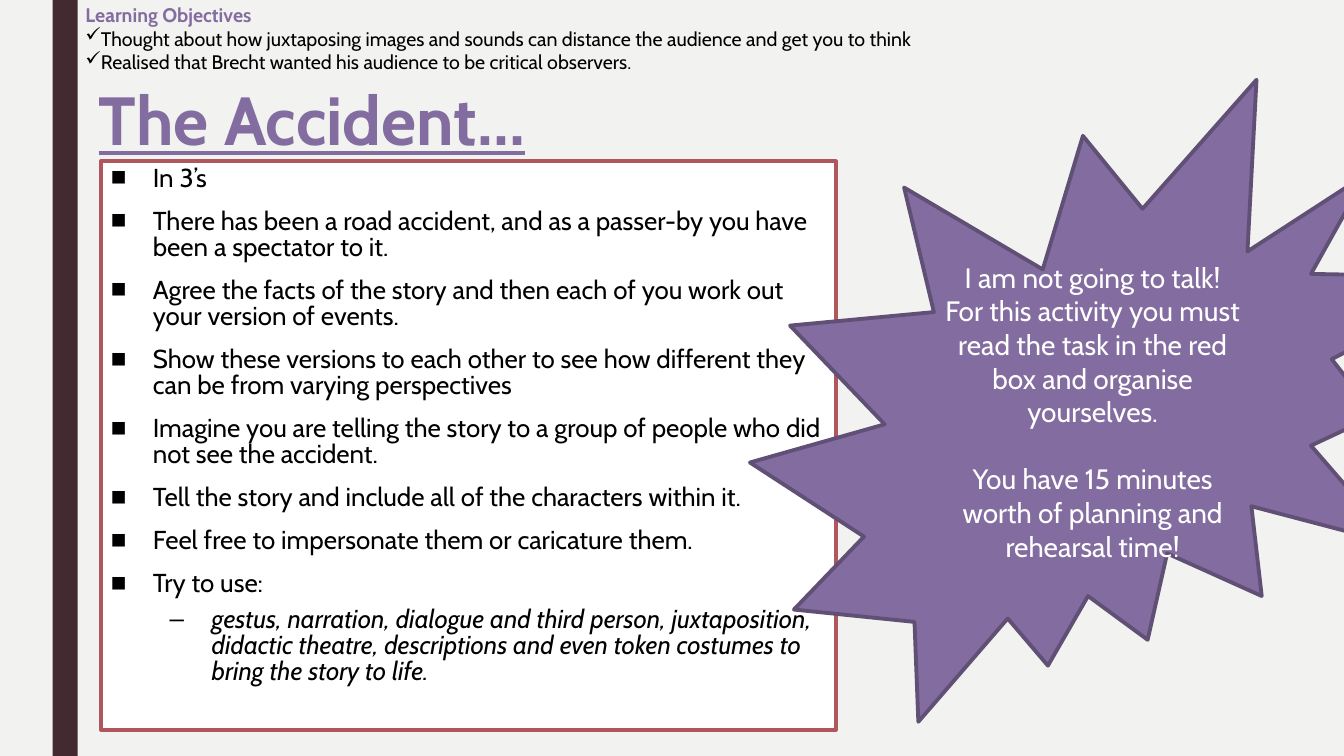
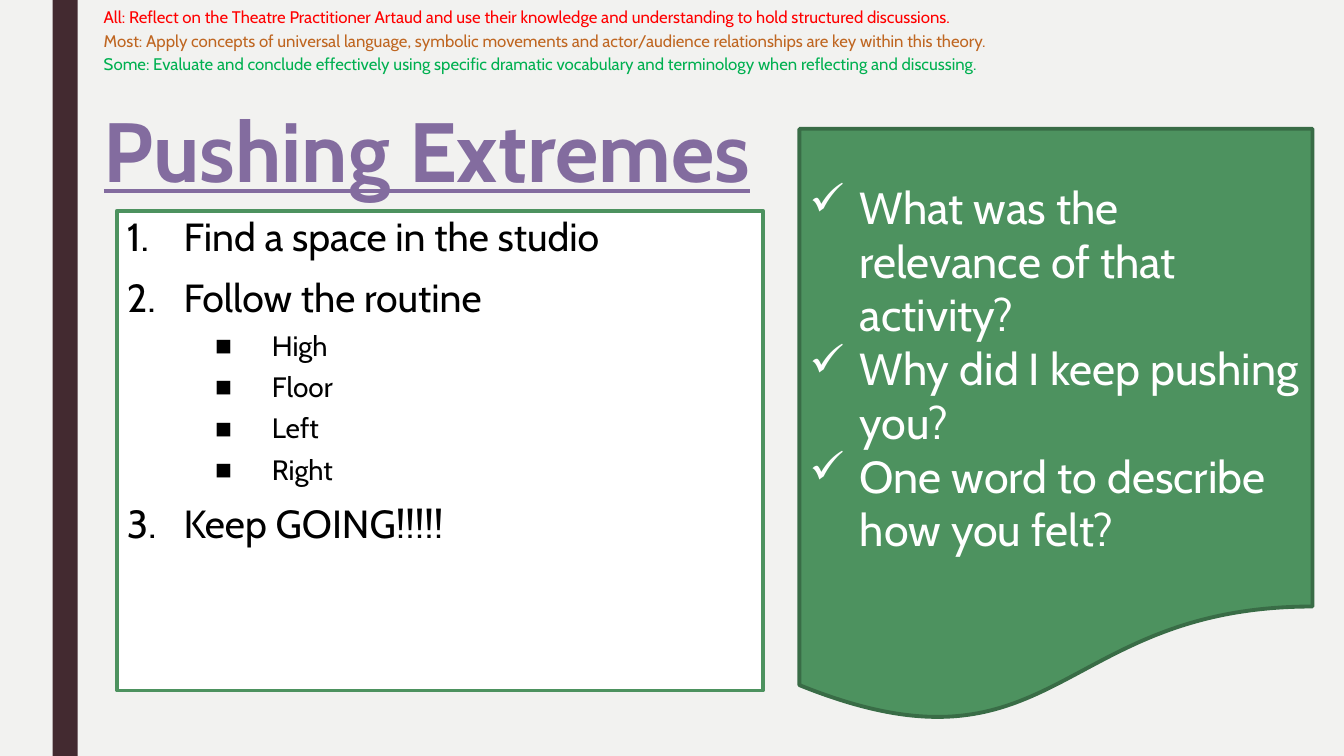
from dataclasses import dataclass, replace

from lxml import etree
from pptx import Presentation
from pptx.dml.color import RGBColor
from pptx.enum import shapes, text
from pptx.oxml import ns
from pptx.util import Pt


@dataclass(frozen=True)
class Theme:
    font: str = "Cabin"
    paper: str = "F2F2F0"
    band: str = "432A30"
    purple: str = "836C9F"
    purple_edge: str = "615076"
    green: str = "4D925F"
    green_edge: str = "396C46"
    red_edge: str = "B0565D"
    white: str = "FFFFFF"
    black: str = "000000"
    all_red: str = "FF0000"
    most_orange: str = "BF6621"
    some_green: str = "00B050"
    title: float = 48.6
    title_big: float = 60
    story: float = 18.5
    steps: float = 28
    moves: float = 20
    objectives: float = 14
    outcomes: float = 12
    callout: float = 20
    questions: float = 32
    edge: float = 2.75


@dataclass(frozen=True)
class Style:
    """Look of one kind of paragraph; indent is (left margin, first line)."""
    size: float
    color: str
    bold: bool = False
    italic: bool = False
    underline: bool = False
    bullet: str = ""
    numbered: bool = False
    indent: tuple = (0, 0)
    level: int = 0
    spacing: float = 1.0
    before: float = 0
    after: float = 0
    align: text.PP_ALIGN = text.PP_ALIGN.LEFT


T = Theme()
TITLE = Style(T.title, T.purple, bold=True, underline=True, spacing=0.89)
STORY = Style(T.story, T.black, bullet="■", indent=(30, -30),
              spacing=0.84, before=10, after=2)
DEVICES = replace(STORY, bullet="–", italic=True, level=1,
                  indent=(72, -30), before=5)
STEP = Style(T.steps, T.black, numbered=True, indent=(40.5, -40.5),
             spacing=0.94, before=10, after=2)
MOVE = replace(STEP, size=T.moves, numbered=False, bullet="■", level=2,
               indent=(103.5, -40.5), before=5)
HEADING = Style(T.objectives, T.purple, bold=True)
OBJECTIVE = Style(T.objectives, T.black, bullet="✓")
OUTCOME = Style(T.outcomes, T.all_red, before=2.4)
CALLOUT = Style(T.callout, T.white, align=text.PP_ALIGN.CENTER)
QUESTION = Style(T.questions, T.white, bullet="✓", indent=(36, -36))


class Deck:
    def __init__(self, theme):
        self.theme = theme
        self.prs = Presentation()
        self.prs.slide_width, self.prs.slide_height = Pt(960), Pt(540)
        fill = self.prs.slide_master.background.fill
        fill.solid()
        fill.fore_color.rgb = RGBColor.from_string(theme.paper)
        self.s = None

    def new_slide(self):
        self.s = self.prs.slides.add_slide(self.prs.slide_layouts[1])
        if len(self.prs.slides) == 1:
            self.add_band()

    def add_band(self):
        """Draw the side band and move it to the master, behind all else."""
        sp = self.s.shapes.add_shape(shapes.MSO_SHAPE.RECTANGLE,
                                     *map(Pt, (37.5, 0, 18, 540)))
        self.paint(sp, self.theme.band)
        self.prs.slide_master.shapes._spTree.insert(2, sp._element)

    def paint(self, sp, fill, edge=None):
        sp.fill.solid()
        sp.fill.fore_color.rgb = RGBColor.from_string(fill)
        if edge:
            sp.line.color.rgb = RGBColor.from_string(edge)
            sp.line.width = Pt(self.theme.edge)
        else:
            sp.line.fill.background()
        if not sp.is_placeholder:
            sp.shadow.inherit = False

    def place(self, sp, box):
        sp.left, sp.top, sp.width, sp.height = map(Pt, box)

    def set_text(self, sp, lines, anchor=text.MSO_ANCHOR.TOP):
        """Fill a shape with (text, style) lines, one paragraph each."""
        tf = sp.text_frame
        tf.word_wrap = True
        tf.auto_size = text.MSO_AUTO_SIZE.NONE
        tf.vertical_anchor = anchor
        for i, (words, style) in enumerate(lines):
            p = tf.add_paragraph() if i else tf.paragraphs[0]
            self.format_paragraph(p, style, first=i == 0)
            r = p.add_run()
            r.text = words
            f = r.font
            f.name, f.size = self.theme.font, Pt(style.size)
            f.bold, f.italic = style.bold, style.italic
            f.underline = style.underline
            f.color.rgb = RGBColor.from_string(style.color)

    def format_paragraph(self, p, style, first):
        pPr = p._p.get_or_add_pPr()
        left, hang = style.indent
        pPr.set("marL", str(Pt(left)))
        pPr.set("indent", str(Pt(hang)))
        if style.numbered:
            etree.SubElement(pPr, ns.qn("a:buAutoNum"), type="arabicPeriod")
        elif style.bullet:
            etree.SubElement(pPr, ns.qn("a:buChar"), char=style.bullet)
        p.level = style.level
        p.alignment = style.align
        p.line_spacing = style.spacing
        p.space_before = Pt(0 if first else style.before)
        p.space_after = Pt(style.after)

    def title(self, words, box, style=TITLE, anchor=text.MSO_ANCHOR.MIDDLE):
        sp = self.s.shapes.title
        self.place(sp, box)
        self.set_text(sp, [(words, style)], anchor)

    def body(self, lines, box, edge):
        sp = self.s.placeholders[1]
        self.place(sp, box)
        self.paint(sp, self.theme.white, edge)
        self.set_text(sp, lines)

    def header(self, lines, box):
        self.set_text(self.s.shapes.add_textbox(*map(Pt, box)), lines)

    def callout(self, kind, lines, box, fill, edge):
        sp = self.s.shapes.add_shape(kind, *map(Pt, box))
        self.paint(sp, fill, edge)
        self.set_text(sp, lines, text.MSO_ANCHOR.MIDDLE)


def accident_slide(deck):
    deck.new_slide()
    deck.title("The Accident…", (63.4, 57, 795.6, 63.4))
    tasks = [
        "In 3’s",
        "There has been a road accident, and as a passer-by you have been "
        "a spectator to it.",
        "Agree the facts of the story and then each of you work out your "
        "version of events.",
        "Show these versions to each other to see how different they can be "
        "from varying perspectives",
        "Imagine you are telling the story to a group of people who did not "
        "see the accident.",
        "Tell the story and include all of the characters within it.",
        "Feel free to impersonate them or caricature them.",
        "Try to use:",
    ]
    devices = ("gestus, narration, dialogue and third person, juxtaposition, "
               "didactic theatre, descriptions and even token costumes to "
               "bring the story to life.")
    deck.body([(task, STORY) for task in tasks] + [(devices, DEVICES)],
              (72, 115.2, 525, 406), T.red_edge)
    deck.header([
        ("Learning Objectives", HEADING),
        ("Thought about how juxtaposing images and sounds can distance the "
         "audience and get you to think", OBJECTIVE),
        ("Realised that Brecht wanted his audience to be critical observers.",
         OBJECTIVE),
    ], (54, -1.4, 906, 58.3))
    deck.callout(shapes.MSO_SHAPE.EXPLOSION2, [
        ("I am not going to talk! For this activity you must read the task "
         "in the red box and organise yourselves.", CALLOUT),
        ("You have 15 minutes worth of planning and rehearsal time!",
         replace(CALLOUT, before=24)),
    ], (535.7, 57, 528.5, 458.6), T.purple, T.purple_edge)


def extremes_slide(deck):
    deck.new_slide()
    deck.title("Pushing Extremes", (67, 75.6, 663.8, 34.6),
               replace(TITLE, size=T.title_big), text.MSO_ANCHOR.TOP)
    moves = [(move, MOVE) for move in ("High", "Floor", "Left", "Right")]
    deck.body([("Find a space in the studio", STEP),
               ("Follow the routine", STEP),
               *moves,
               ("Keep GOING!!!!!", STEP)],
              (83.5, 150.5, 461.5, 342.7), T.green)
    deck.header([
        ("All: Reflect on the Theatre Practitioner Artaud and use their "
         "knowledge and understanding to hold structured discussions.",
         OUTCOME),
        ("Most: Apply concepts of universal language, symbolic movements and "
         "actor/audience relationships are key within this theory.",
         replace(OUTCOME, color=T.most_orange)),
        ("Some: Evaluate and conclude effectively using specific dramatic "
         "vocabulary and terminology when reflecting and discussing.",
         replace(OUTCOME, color=T.some_green)),
    ], (67, 1.4, 870.5, 74.2))
    questions = ("What was the relevance of that activity?",
                 "Why did I keep pushing you?",
                 "One word to describe how you felt?")
    deck.callout(shapes.MSO_SHAPE.FLOWCHART_DOCUMENT,
                 [(question, QUESTION) for question in questions],
                 (571, 92, 366.5, 425.5), T.green, T.green_edge)


def main():
    deck = Deck(T)
    accident_slide(deck)
    extremes_slide(deck)
    deck.prs.save("out.pptx")


if __name__ == "__main__":
    main()
